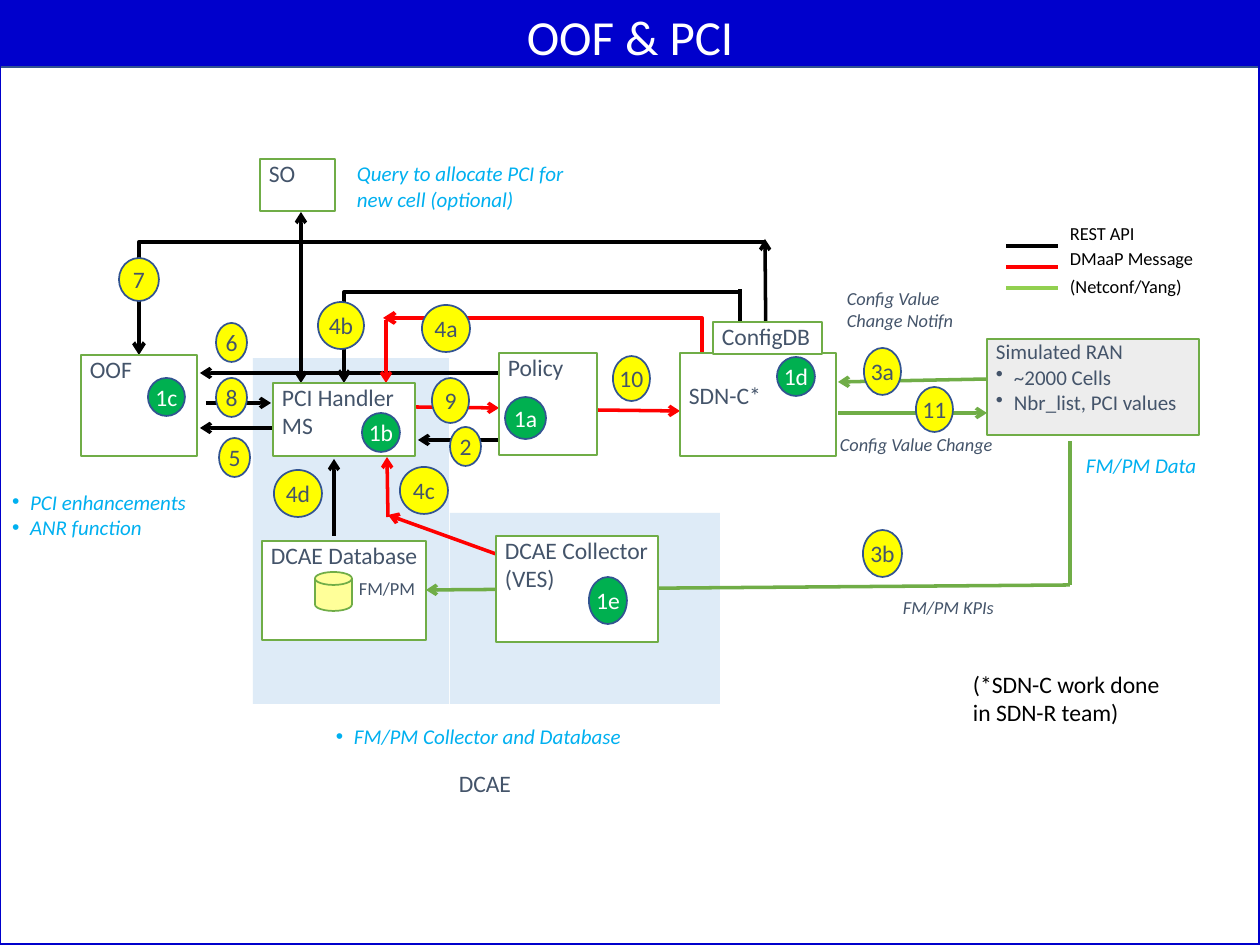
import lxml.etree
import pptx
import pptx.dml.color
import pptx.enum.shapes
import pptx.enum.text
import pptx.oxml.ns
import pptx.util

SHAPES = pptx.enum.shapes.MSO_SHAPE
CONNECTORS = pptx.enum.shapes.MSO_CONNECTOR
ALIGN = pptx.enum.text.PP_ALIGN
ANCHOR = pptx.enum.text.MSO_ANCHOR
PX = 914400 / 126
COLORS = {
    "banner": "0000CC", "outline": "325491", "area": "DEEBF7", "white": "FFFFFF",
    "green": "70AD47", "grey": "EDEDED", "slate": "44546A", "yellow": "FFFF00",
    "done": "00B050", "red": "FF0000", "black": "000000", "netconf": "92D050",
    "note": "00B0F0", "disk": "FFFF99",
}
AREAS = [(450, 513, 270, 191), (253, 358, 196, 346)]
BOXES = [
    ("SO", 260, 159, 75, 52, "white", 0),
    ("OOF", 81, 355, 116, 101, None, 0),
    ("PCI Handler MS", 273, 383, 142, 73, "white", 0),
    ("Policy", 499, 353, 98, 102, "white", 0),
    ("SDN-C*", 680, 353, 156, 103, "white", 28),
    ("ConfigDB", 713, 322, 109, 32, "white", 0),
    ("DCAE Collector\n(VES)", 496, 536, 162, 106, "white", 0),
    ("DCAE Database", 262, 541, 164, 99, "white", 0),
]
LINES = [
    ("red", 680, 411, 597, 410, "head"), ("black", 499, 440, 418, 440, "tail"),
    ("red", 415, 407, 499, 408, "tail"), ("black", 206, 403, 271, 403, "tail"),
    ("black", 273, 428, 200, 428, "tail"), ("black", 740, 350, 740, 289, ""),
    ("black", 499, 373, 200, 373, "tail"), ("black", 766, 353, 765, 239, "tail"),
    ("green", 987, 379, 838, 382, "tail"), ("green", 987, 413, 838, 413, "head"),
    ("red", 387, 457, 388, 517, "head"), ("red", 388, 515, 496, 554, "head"),
    ("red", 386, 383, 386, 320, "head"), ("black", 334, 459, 334, 536, "head"),
    ("black", 301, 212, 301, 383, "head tail"), ("green", 1070, 441, 1070, 585, ""),
    ("green", 1070, 585, 426, 590, "tail"),
]
ELBOWS = [
    ("black", 739, 292, 344, 383, "tail"),
    ("red", 383, 318, 702, 354, "head"),
    ("black", 765, 242, 139, 355, "tail"),
]
BADGES = [
    ("2", 450, 427, 31, 39), ("5", 219, 438, 31, 39), ("6", 216, 323, 31, 39),
    ("8", 216, 378, 31, 39), ("9", 432, 378, 37, 45), ("10", 613, 356, 37, 45),
    ("11", 916, 387, 37, 45), ("7", 119, 258, 40, 43), ("3a", 864, 348, 37, 47),
    ("3b", 863, 530, 39, 47), ("4a", 422, 305, 48, 47), ("4b", 318, 302, 46, 47),
    ("4c", 400, 467, 48, 47), ("4d", 274, 470, 48, 47),
]
DONE_BADGES = [
    ("1a", 505, 397, 41, 42), ("1b", 362, 413, 38, 39), ("1c", 148, 378, 37, 38),
    ("1d", 777, 357, 38, 39), ("1e", 589, 577, 38, 47),
]
LEGEND = [("REST API", "black", 222, 246), ("DMaaP Message", "red", 247, 267),
          ("(Netconf/Yang)", "netconf", 275, 288)]
LABELS = [
    ("Config Value\nChange Notifn", 847, 287, 140, 47, 10.5, "slate", True),
    ("Config Value Change", 840, 433, 165, 35, 10.5, "slate", True),
    ("FM/PM KPIs", 903, 596, 98, 39, 10.5, "slate", True),
    ("FM/PM", 359, 577, 62, 34, 10.5, "slate", False),
    ("DCAE", 459, 769, 100, 30, 13.5, "slate", False),
    ("(*SDN-C work done\nin SDN-R team)", 973, 670, 210, 72, 13.5, "black", False),
    ("Query to allocate PCI for new cell (optional)", 357, 161, 227, 65, 12, "note", True),
    ("FM/PM Data", 1086, 453, 139, 34, 12, "note", True),
]
LISTS = [
    ("PCI enhancements\nANR function", 12, 489, 195, 65),
    ("FM/PM Collector and Database", 336, 724, 320, 34),
]


def px(*lengths):
    """Turn pixel lengths into EMU."""
    return [pptx.util.Emu(round(length * PX)) for length in lengths]


def color(name):
    """Return the named colour."""
    return pptx.dml.color.RGBColor.from_string(COLORS[name])


def apply(target, **values):
    """Set each given attribute on the target."""
    for name, value in values.items():
        setattr(target, name, value)


def paint(shape, fill, line=None, width=1):
    """Give a shape its fill and outline, without a shadow."""
    shape.shadow.inherit = False
    for part, name in ((shape.fill, fill), (shape.line.fill, line)):
        if name:
            part.solid()
            part.fore_color.rgb = color(name)
        else:
            part.background()
    if line:
        shape.line.width = pptx.util.Pt(width)


def add_bullet(paragraph):
    """Give a paragraph a hanging round bullet."""
    properties = paragraph._p.get_or_add_pPr()
    indent = px(18)[0]
    properties.set("marL", str(indent))
    properties.set("indent", str(-indent))
    bullet = lxml.etree.SubElement(properties, pptx.oxml.ns.qn("a:buChar"))
    bullet.set("char", "•")


def write(shape, text, size, ink, italic=False, align=ALIGN.LEFT, anchor=ANCHOR.TOP,
          left=0, top=0, wrap=True, first_bullet=None):
    """Write formatted lines into a shape, bulleted from a given line on."""
    frame = shape.text_frame
    margin_left, margin_top = px(left, top)
    apply(frame, text=text, word_wrap=wrap, vertical_anchor=anchor,
          auto_size=pptx.enum.text.MSO_AUTO_SIZE.NONE,
          margin_left=margin_left, margin_top=margin_top, margin_right=0, margin_bottom=0)
    for index, paragraph in enumerate(frame.paragraphs):
        apply(paragraph, alignment=align, space_before=pptx.util.Pt(0))
        if first_bullet is not None and index >= first_bullet:
            add_bullet(paragraph)
        for run in paragraph.runs:
            apply(run.font, name="Calibri", size=pptx.util.Pt(size), italic=italic)
            run.font.color.rgb = color(ink)


def add_shape(slide, kind, box, fill, line=None, width=1):
    """Add a painted preset shape."""
    shape = slide.shapes.add_shape(kind, *px(*box))
    paint(shape, fill, line, width)
    return shape


def add_line(slide, ink, ends, arrows="", elbow=False):
    """Add a straight or one-corner connector with open arrowheads."""
    kind = CONNECTORS.ELBOW if elbow else CONNECTORS.STRAIGHT
    connector = slide.shapes.add_connector(kind, *px(*ends))
    connector.line.color.rgb = color(ink)
    connector.line.width = pptx.util.Pt(2.25 if elbow else 2)
    properties = connector.element.spPr
    if elbow:
        properties.find(pptx.oxml.ns.qn("a:prstGeom")).set("prst", "bentConnector2")
    outline = properties.find(pptx.oxml.ns.qn("a:ln"))
    for end in arrows.split():
        lxml.etree.SubElement(outline, pptx.oxml.ns.qn(f"a:{end}End")).set("type", "arrow")
    lxml.etree.SubElement(properties, pptx.oxml.ns.qn("a:effectLst"))


def add_label(slide, text, box, size, ink, italic=False):
    """Add a text box."""
    write(slide.shapes.add_textbox(*px(*box)), text, size, ink, italic)


def add_badge(slide, text, box, fill, ink):
    """Add a numbered step ellipse."""
    shape = add_shape(slide, SHAPES.OVAL, box, fill, "outline")
    write(shape, text, 13.5, ink, align=ALIGN.CENTER, anchor=ANCHOR.MIDDLE, wrap=False)


def place(placeholder, box):
    """Move and size a placeholder."""
    left, top, width, height = px(*box)
    apply(placeholder, left=left, top=top, width=width, height=height)


def fill_placeholders(slide):
    """Format the title banner and the two bulleted notes."""
    title, *bodies = slide.placeholders
    place(title, (0, 1, 1260, 66))
    fill = title.fill
    fill.solid()
    fill.fore_color.rgb = color("banner")
    title.line.color.rgb = color("outline")
    title.line.width = pptx.util.Pt(1)
    write(title, "OOF & PCI", 28, "white", align=ALIGN.CENTER, anchor=ANCHOR.MIDDLE, top=3)
    for body, (text, *box) in zip(bodies, LISTS):
        place(body, box)
        write(body, text, 12, "note", italic=True, first_bullet=0)


def main():
    """Build the slide and save it."""
    presentation = pptx.Presentation()
    presentation.slide_width, presentation.slide_height = px(1260, 945)
    slide = presentation.slides.add_slide(presentation.slide_layouts[3])
    fill_placeholders(slide)
    add_shape(slide, SHAPES.RECTANGLE, (-1, 1, 1261, 944), None, "banner", 2.25)
    for area in AREAS:
        add_shape(slide, SHAPES.RECTANGLE, area, "area")
    for ink, *ends, arrows in LINES:
        add_line(slide, ink, ends, arrows)
    for ink, *ends, arrows in ELBOWS:
        add_line(slide, ink, ends, arrows, elbow=True)
    for text, *box, fill, top in BOXES:
        shape = add_shape(slide, SHAPES.RECTANGLE, box, fill, "green")
        write(shape, text, 13.5, "slate", left=9, top=top)
    network = add_shape(slide, SHAPES.RECTANGLE, (987, 339, 212, 96), "grey", "green")
    write(network, "Simulated RAN\n~2000 Cells\nNbr_list, PCI values", 12, "slate",
          left=9, first_bullet=1)
    add_shape(slide, SHAPES.FLOWCHART_MAGNETIC_DISK, (315, 572, 37, 39), "disk", "green")
    for text, *box in BADGES:
        add_badge(slide, text, box, "yellow", "slate")
    for text, *box in DONE_BADGES:
        add_badge(slide, text, box, "done", "white")
    for text, ink, top, line_top in LEGEND:
        add_line(slide, ink, (1058, line_top, 1006, line_top))
        add_label(slide, text, (1070, top, 140, 35), 10.5, "black")
    for text, *box, size, ink, italic in LABELS:
        add_label(slide, text, box, size, ink, italic)
    presentation.save("out.pptx")


if __name__ == "__main__":
    main()
